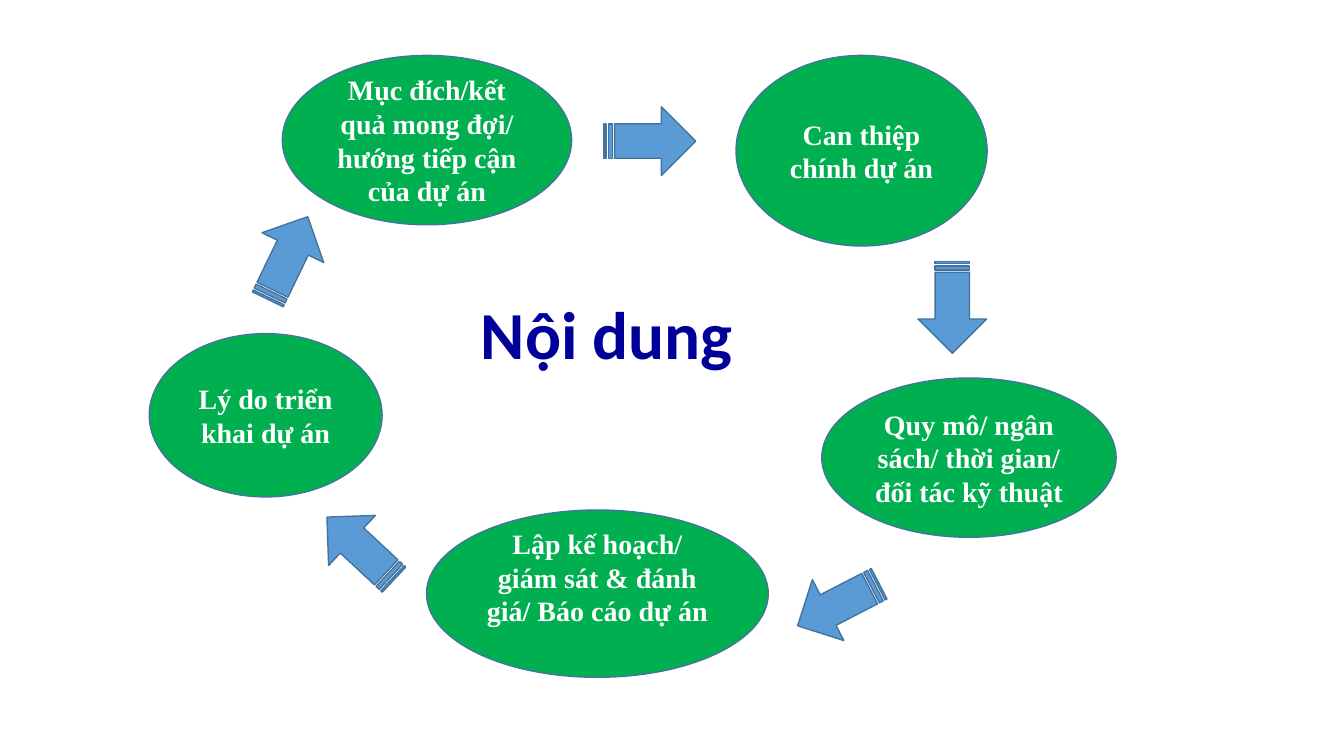
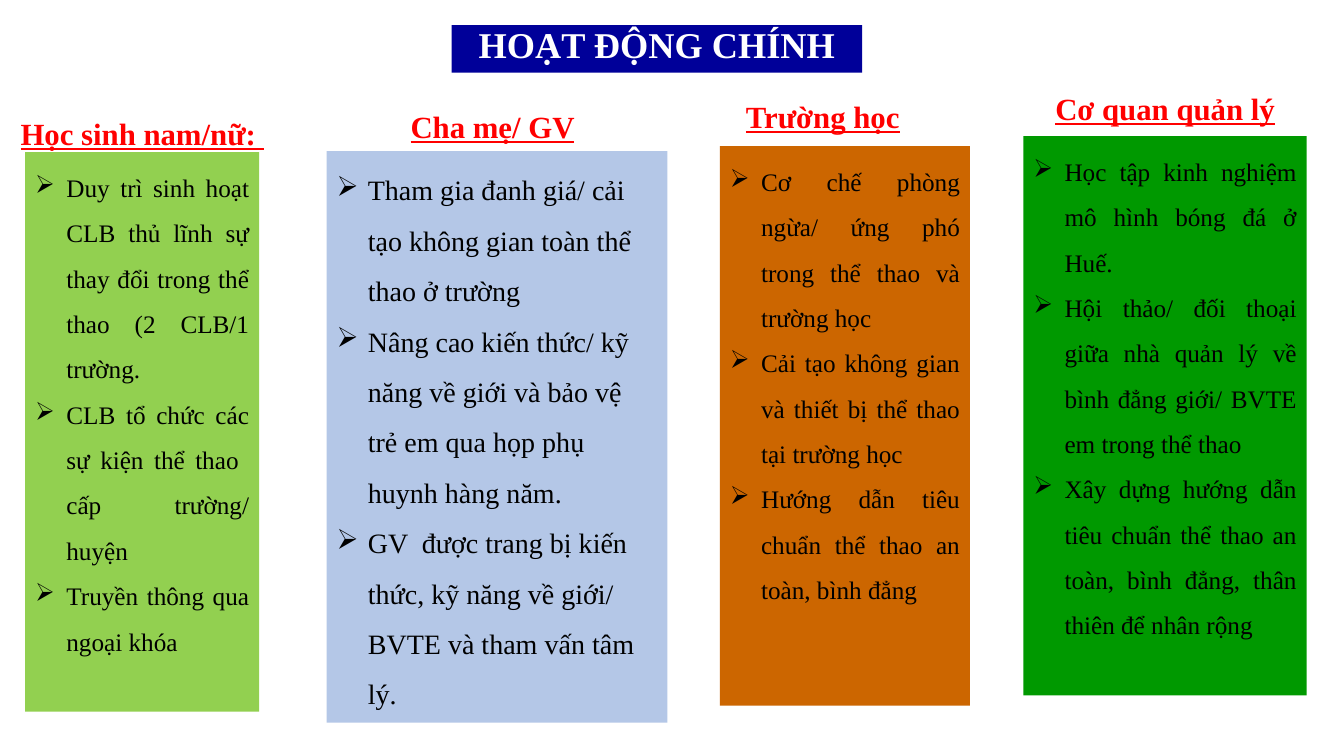
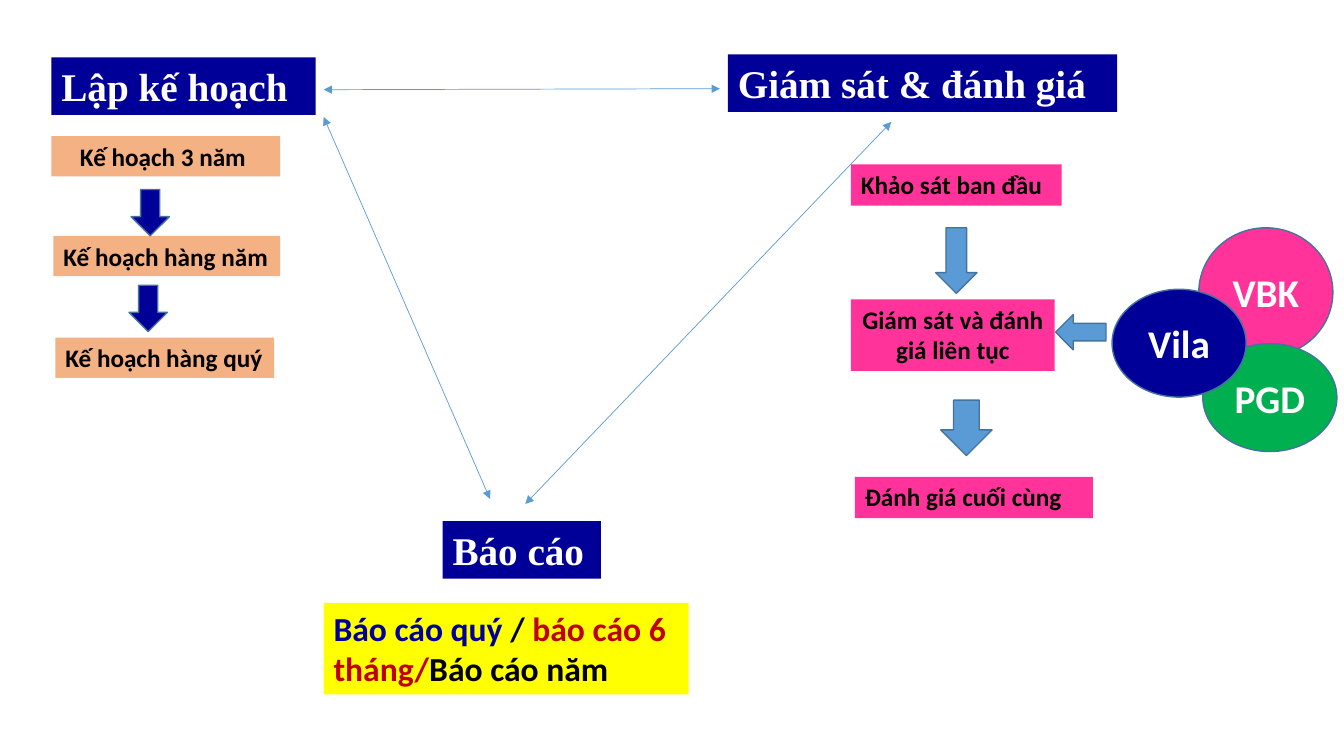
from dataclasses import dataclass
from typing import NamedTuple

from lxml import etree
from pptx import Presentation
from pptx.dml.color import RGBColor
from pptx.enum.shapes import MSO_CONNECTOR, MSO_SHAPE
from pptx.enum.text import MSO_ANCHOR, MSO_AUTO_SIZE, PP_ALIGN
from pptx.oxml.ns import qn
from pptx.shapes.base import BaseShape
from pptx.slide import Slide
from pptx.util import Emu, Pt

RECTANGLE, ELLIPSE = MSO_SHAPE.RECTANGLE, MSO_SHAPE.OVAL
STRIPED_ARROW = MSO_SHAPE.STRIPED_RIGHT_ARROW
DOWN_ARROW, LEFT_ARROW = MSO_SHAPE.DOWN_ARROW, MSO_SHAPE.LEFT_ARROW
LEFT, CENTER, JUSTIFY = PP_ALIGN.LEFT, PP_ALIGN.CENTER, PP_ALIGN.JUSTIFY
TOP, MIDDLE = MSO_ANCHOR.TOP, MSO_ANCHOR.MIDDLE

EMU_PER_PX = 9144  # 100 px to the inch
SLIDE_WIDTH, SLIDE_HEIGHT = 1333, 750
TITLE_ONLY, BLANK = 5, 6

SERIF, SANS = "Times New Roman", "Calibri"
NAVY, GREEN, PINK, PEACH = "000099", "00B050", "FF3399", "F4B183"
BLUE, OUTLINE = "5B9BD5", "43739E"
WHITE, BLACK, RED, DARK_RED, YELLOW = "FFFFFF", "000000", "FF0000", "C00000", "FFFF00"
BULLET, BULLET_INDENT = "➢", 31


class Box(NamedTuple):
    left: int
    top: int
    width: int
    height: int


class Span(NamedTuple):
    text: str
    color: str


@dataclass
class Arrow:
    box: Box
    rotation: float = 0
    kind: MSO_SHAPE = STRIPED_ARROW
    fill: str = BLUE


@dataclass
class Label:
    text: str
    box: Box
    fill: str
    align: PP_ALIGN = LEFT
    wrap: bool = True


@dataclass
class Column:
    heading: str
    heading_box: Box
    panel_box: Box
    fill: str
    items: tuple[str, ...]
    size: int = 18
    align: PP_ALIGN = JUSTIFY


def px(length: int) -> Emu:
    return Emu(length * EMU_PER_PX)


def rgb(color: str) -> RGBColor:
    return RGBColor.from_string(color)


def place(shape: BaseShape, box: Box) -> None:
    shape.left, shape.top, shape.width, shape.height = map(px, box)


def add_bullet(paragraph) -> None:
    properties = paragraph._p.get_or_add_pPr()
    properties.set("marL", str(px(BULLET_INDENT)))
    properties.set("indent", str(-px(BULLET_INDENT)))
    etree.SubElement(properties, qn("a:buChar")).set("char", BULLET)


def write_text(shape: BaseShape, *paragraphs: str | list[Span], size: float,
               font: str = SERIF, color: str = BLACK, bold: bool = True,
               underline: bool = False, align: PP_ALIGN = LEFT,
               anchor: MSO_ANCHOR = TOP, wrap: bool = True, bullets: bool = False,
               line_spacing: float = 1.0, space_before: int = 0) -> None:
    """Fill a shape with paragraphs, each a string or a list of coloured spans."""
    frame = shape.text_frame
    frame.auto_size = MSO_AUTO_SIZE.NONE
    frame.word_wrap = wrap
    frame.vertical_anchor = anchor
    for index, content in enumerate(paragraphs):
        paragraph = frame.add_paragraph() if index else frame.paragraphs[0]
        paragraph.alignment = align
        paragraph.line_spacing = line_spacing
        paragraph.space_before = Pt(space_before)
        if bullets:
            add_bullet(paragraph)
        for span in [Span(content, color)] if isinstance(content, str) else content:
            run = paragraph.add_run()
            run.text = span.text
            run.font.name, run.font.size = font, Pt(size)
            run.font.bold, run.font.underline = bold, underline
            run.font.color.rgb = rgb(span.color)


def add_shape(slide: Slide, kind: MSO_SHAPE, box: Box, fill: str,
              line: str | None = None) -> BaseShape:
    shape = slide.shapes.add_shape(kind, *map(px, box))
    shape.shadow.inherit = False
    shape.fill.solid()
    shape.fill.fore_color.rgb = rgb(fill)
    if line:
        shape.line.color.rgb = rgb(line)
        shape.line.width = Pt(1)
    else:
        shape.line.fill.background()
    return shape


def add_ellipse(slide: Slide, text: str, box: Box, fill: str, size: int,
                font: str, wrap: bool = True) -> BaseShape:
    ellipse = add_shape(slide, ELLIPSE, box, fill, OUTLINE)
    write_text(ellipse, text, size=size, font=font, color=WHITE, align=CENTER,
               anchor=MIDDLE, wrap=wrap)
    return ellipse


def add_arrow(slide: Slide, arrow: Arrow) -> None:
    shape = add_shape(slide, arrow.kind, arrow.box, arrow.fill, OUTLINE)
    shape.rotation = arrow.rotation


def add_double_arrow(slide: Slide, start: tuple[int, int], end: tuple[int, int]) -> None:
    connector = slide.shapes.add_connector(MSO_CONNECTOR.STRAIGHT, *map(px, start + end))
    connector.line.color.rgb = rgb(BLUE)
    connector.line.width = Pt(0.5)
    line = connector.line._get_or_add_ln()
    for tag in ("a:headEnd", "a:tailEnd"):
        etree.SubElement(line, qn(tag)).set("type", "triangle")
    etree.SubElement(connector._element.spPr, qn("a:effectLst"))


def add_slide(presentation: Presentation, layout: int) -> Slide:
    return presentation.slides.add_slide(presentation.slide_layouts[layout])


TOPICS = (
    ("Lý do triển khai dự án", Box(148, 331, 231, 162)),
    ("Mục đích/kết quả mong đợi/ hướng tiếp cận của dự án", Box(280, 55, 287, 168)),
    ("Quy mô/ ngân sách/ thời gian/ đối tác kỹ thuật", Box(815, 375, 292, 158)),
    ("Can thiệp chính dự án", Box(730, 55, 249, 189)),
)
PLANNING_TOPIC = ("Lập kế hoạch/ giám sát & đánh giá/ Báo cáo dự án",
                  Box(423, 506, 339, 166))
CYCLE_ARROWS = tuple(
    Arrow(Box(left, top, 91, 68), rotation)
    for left, top, rotation in ((899, 271, 90), (240, 222, 295.8), (599, 106, 0),
                                (786, 566, 152.7), (312, 510, 223)))

COLUMNS = (
    Column("Học sinh nam/nữ: ", Box(9, 109, 264, 47), Box(25, 151, 232, 555), "92D050", (
        "Duy trì sinh hoạt CLB thủ lĩnh sự thay đổi trong thể thao (2 CLB/1 trường.",
        "CLB tổ chức các sự kiện thể thao  cấp trường/ huyện",
        "Truyền thông qua ngoại khóa")),
    Column("Cha mẹ/ GV", Box(396, 102, 185, 47), Box(324, 150, 338, 567), "B4C7E7", (
        "Tham gia đanh giá/ cải tạo không gian toàn thể thao ở trường",
        "Nâng cao kiến thức/ kỹ năng về giới và bảo vệ trẻ em qua họp phụ huynh hàng năm.",
        "GV  được trang bị kiến thức, kỹ năng về giới/ BVTE và tham vấn tâm lý."),
        size=20, align=LEFT),
    Column("Trường học", Box(729, 92, 174, 47), Box(714, 145, 248, 555), "CC6600", (
        "Cơ chế phòng ngừa/ ứng phó trong thể thao và trường học",
        "Cải tạo không gian và thiết bị thể thao tại trường học",
        "Hướng dẫn tiêu chuẩn thể thao an toàn, bình đẳng")),
    Column("Cơ quan quản lý", Box(1035, 84, 241, 47), Box(1015, 135, 281, 555), "009900", (
        "Học tập kinh nghiệm mô hình bóng đá ở Huế.",
        "Hội thảo/ đối thoại giữa nhà quản lý về bình đẳng giới/ BVTE em trong thể thao",
        "Xây dựng hướng dẫn tiêu chuẩn thể thao an toàn, bình đẳng, thân thiên để nhân rộng")),
)

STAGES = (
    ("Giám sát & đánh giá", Box(722, 54, 386, 57)),
    ("Lập kế hoạch", Box(51, 57, 262, 57)),
    ("Báo cáo", Box(439, 517, 157, 57)),
)
STEPS = (
    Label("Khảo sát ban đầu", Box(844, 163, 209, 41), PINK),
    Label("Giám sát và đánh giá liên tục", Box(844, 297, 202, 71), PINK, CENTER),
    Label("Đánh giá cuối cùng", Box(848, 473, 236, 41), PINK),
    Label("Kế hoạch 3 năm ", Box(51, 135, 227, 40), PEACH, CENTER),
    Label("Kế hoạch hàng năm", Box(53, 234, 225, 40), PEACH, wrap=False),
    Label("Kế hoạch hàng quý", Box(55, 335, 217, 40), PEACH, wrap=False),
)
STEP_ARROWS = (
    Arrow(Box(928, 226, 41, 65), kind=DOWN_ARROW),
    Arrow(Box(933, 397, 51, 55), kind=DOWN_ARROW),
    Arrow(Box(1047, 312, 50, 35), kind=LEFT_ARROW),
    Arrow(Box(130, 188, 38, 46), kind=DOWN_ARROW, fill=NAVY),
    Arrow(Box(128, 283, 38, 46), kind=DOWN_ARROW, fill=NAVY),
)
PARTNERS = (
    ("VBK", Box(1189, 226, 133, 128), PINK),
    ("PGD", Box(1193, 341, 133, 107), GREEN),
    ("Vila", Box(1103, 287, 133, 107), NAVY),
)
STAGE_LINKS = (
    ((321, 89), (714, 88)),
    ((321, 116), (486, 495)),
    ((884, 121), (521, 500)),
)
REPORT_KINDS = [Span("Báo cáo quý ", NAVY), Span("/ ", BLACK),
                Span("báo cáo 6 tháng/", DARK_RED), Span("Báo cáo năm", BLACK)]


def build_contents(presentation: Presentation) -> None:
    slide = add_slide(presentation, TITLE_ONLY)
    title = slide.shapes.title
    place(title, Box(467, 285, 329, 91))
    write_text(title, "Nội dung", size=48, font=SANS, color=NAVY)
    for text, box in TOPICS:
        add_ellipse(slide, text, box, GREEN, 20, SERIF)
    planning = add_ellipse(slide, *PLANNING_TOPIC, GREEN, 20, SERIF)
    planning.text_frame.margin_top = 0
    planning.text_frame.margin_bottom = px(33)
    for arrow in CYCLE_ARROWS:
        add_arrow(slide, arrow)


def build_activities(presentation: Presentation) -> None:
    slide = add_slide(presentation, TITLE_ONLY)
    title = slide.shapes.title
    place(title, Box(448, 25, 407, 47))
    title.fill.solid()
    title.fill.fore_color.rgb = rgb(NAVY)
    write_text(title, "HOẠT ĐỘNG CHÍNH", size=25.9, color=WHITE, align=CENTER,
               line_spacing=0.8, space_before=10)
    for column in COLUMNS:
        panel = add_shape(slide, RECTANGLE, column.panel_box, column.fill)
        write_text(panel, *column.items, size=column.size, bold=False,
                   align=column.align, bullets=True, line_spacing=1.5)
        heading = slide.shapes.add_textbox(*map(px, column.heading_box))
        write_text(heading, column.heading, size=22, color=RED, underline=True,
                   align=CENTER, wrap=False)


def build_monitoring(presentation: Presentation) -> None:
    slide = add_slide(presentation, BLANK)
    for text, box in STAGES:
        stage = add_shape(slide, RECTANGLE, box, NAVY)
        write_text(stage, text, size=28, color=WHITE)
    for step in STEPS:
        label = add_shape(slide, RECTANGLE, step.box, step.fill)
        write_text(label, step.text, size=18, font=SANS, align=step.align, wrap=step.wrap)
    for arrow in STEP_ARROWS:
        add_arrow(slide, arrow)
    reports = add_shape(slide, RECTANGLE, Box(321, 598, 362, 91), YELLOW)
    write_text(reports, REPORT_KINDS, size=24, font=SANS)
    for name, box, fill in PARTNERS:
        add_ellipse(slide, name, box, fill, 28, SANS, wrap=False)
    for start, end in STAGE_LINKS:
        add_double_arrow(slide, start, end)


def main() -> None:
    presentation = Presentation()
    presentation.slide_width, presentation.slide_height = px(SLIDE_WIDTH), px(SLIDE_HEIGHT)
    build_contents(presentation)
    build_activities(presentation)
    build_monitoring(presentation)
    presentation.save("out.pptx")


if __name__ == "__main__":
    main()
